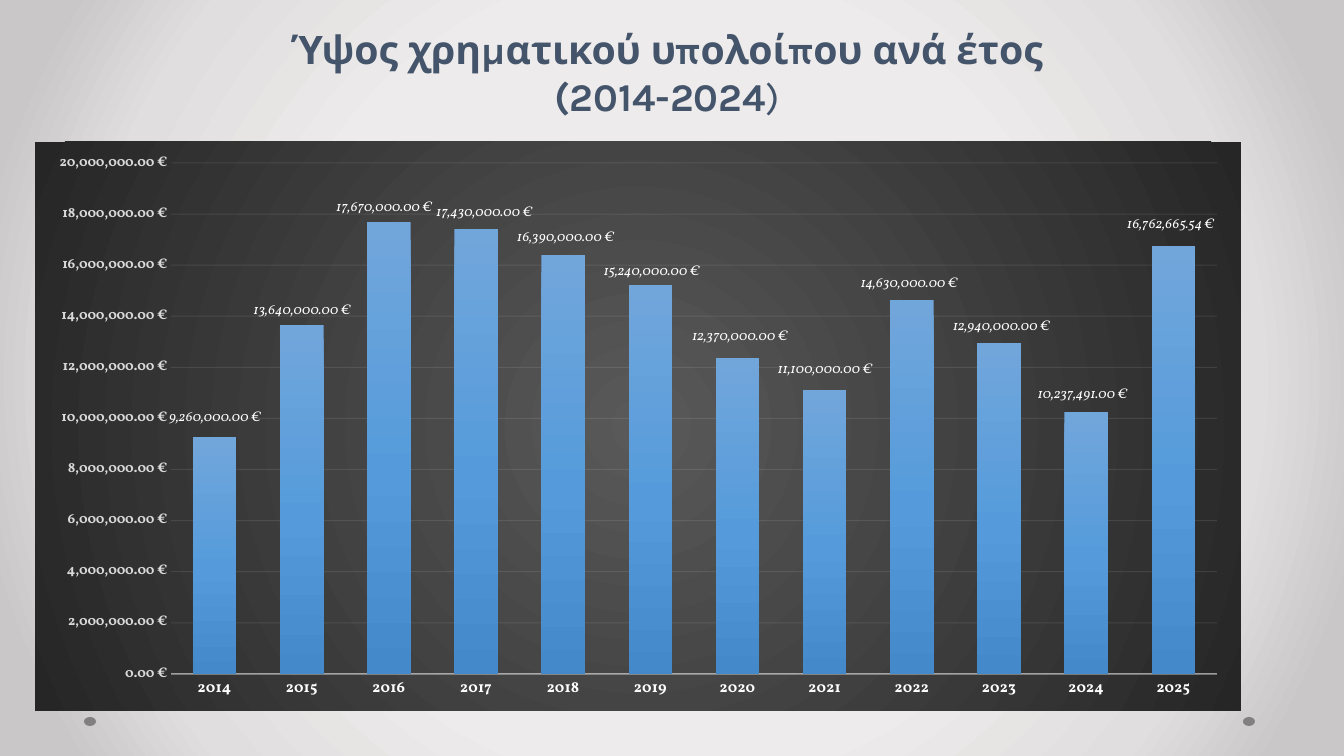
from dataclasses import dataclass, field
from typing import Any, NamedTuple

from lxml.etree import SubElement
from pptx import Presentation
from pptx.chart.chart import Chart
from pptx.chart.data import CategoryChartData
from pptx.dml.color import RGBColor
from pptx.dml.line import LineFormat
from pptx.enum.chart import XL_CHART_TYPE, XL_LABEL_POSITION, XL_TICK_MARK
from pptx.enum.shapes import MSO_SHAPE
from pptx.enum.text import MSO_ANCHOR, PP_ALIGN
from pptx.oxml import parse_xml
from pptx.oxml.ns import nsdecls, qn
from pptx.slide import Slide
from pptx.util import Emu, Pt

EURO = '#,##0.00\\ "€"'
LABEL_GAP = 13


class Box(NamedTuple):
    x: int
    y: int
    w: int
    h: int


class Gradient(NamedTuple):
    stops: tuple[tuple[int, str], ...]
    radial: bool


class Balance(NamedTuple):
    year: str
    amount: float
    shift: int
    gap: int


@dataclass(frozen=True)
class TextStyle:
    name: str
    size: int
    color: str
    bold: bool = False
    italic: bool = False

    def values(self) -> dict[str, Any]:
        return {"name": self.name, "size": Pt(self.size), "bold": self.bold, "italic": self.italic}


@dataclass(frozen=True)
class Theme:
    title: TextStyle = field(default=TextStyle("Karla", 28, "44546A", bold=True))
    years: TextStyle = field(default=TextStyle("Vollkorn", 11, "FFFFFF", bold=True))
    amounts: TextStyle = field(default=TextStyle("Vollkorn", 10, "D9D9D9", bold=True))
    labels: TextStyle = field(default=TextStyle("Vollkorn", 10, "FFFFFF", italic=True))
    dot: str = "808080"
    rule: str = "F2F2F2"
    page: Gradient = Gradient(((50, "EDEBEB"), (76, "E0DEDE"), (92, "C9C7C7")), True)
    panel: Gradient = Gradient(((0, "595959"), (100, "262626")), True)
    bars: Gradient = Gradient(((0, "71A6DB"), (55, "559BDB"), (100, "448ACA")), False)


THEME = Theme()
PAGE = Box(0, 0, 1344, 756)
TITLE = Box(247, 25, 840, 99)
CHART = Box(35, 142, 1206, 569)
PLOT = Box(171, 163, 1046, 511)
DOTS = [Box(x, 717, 12, 9) for x in (84, 1243)]
BALANCES = [
    Balance("2014", 9260000, 0, 19),
    Balance("2015", 13640000, 0, 14),
    Balance("2016", 17670000, -5, 14),
    Balance("2017", 17430000, 8, 15),
    Balance("2018", 16390000, 2, 16),
    Balance("2019", 15240000, 1, 12),
    Balance("2020", 12370000, 2, 20),
    Balance("2021", 11100000, 0, 20),
    Balance("2022", 14630000, -3, 15),
    Balance("2023", 12940000, 2, 16),
    Balance("2024", 10237491, -4, 17),
    Balance("2025", 16762665.54, -3, 20),
]


def px(n: int) -> Emu:
    return Emu(round(n * 914400 / 100.8))


def place(box: Box) -> list[Emu]:
    return [px(n) for n in box]


def assign(target: Any, values: dict[str, Any]) -> None:
    for name, value in values.items():
        setattr(target, name, value)


def set_font(font: Any, style: TextStyle) -> None:
    assign(font, style.values())
    font.color.rgb = RGBColor.from_string(style.color)


def gradient_fill(gradient: Gradient) -> Any:
    stops = "".join(
        f'<a:gs pos="{pos * 1000}"><a:srgbClr val="{color}"/></a:gs>' for pos, color in gradient.stops
    )
    centre = '<a:fillToRect l="50000" t="50000" r="50000" b="50000"/>'
    shade = f'<a:path path="circle">{centre}</a:path>' if gradient.radial else '<a:lin ang="5400000" scaled="0"/>'
    return parse_xml(f'<a:gradFill {nsdecls("a")} rotWithShape="1"><a:gsLst>{stops}</a:gsLst>{shade}</a:gradFill>')


def repaint(solid: Any, gradient: Gradient) -> None:
    solid.getparent().replace(solid, gradient_fill(gradient))


def manual_layout(inner: bool, **fractions: float) -> Any:
    target = '<c:layoutTarget val="inner"/>' if inner else ""
    modes = '<c:xMode val="edge"/><c:yMode val="edge"/>' if inner else ""
    parts = "".join(f'<c:{name} val="{value:.4f}"/>' for name, value in fractions.items())
    return parse_xml(
        f'<c:layout {nsdecls("c")}><c:manualLayout>{target}{modes}{parts}</c:manualLayout></c:layout>'
    )


def draw_rule(line: LineFormat, width: float, owner: Any, path: str, opacity: int) -> None:
    line.width = Pt(width)
    line.color.rgb = RGBColor.from_string(THEME.rule)
    for color in owner.xpath(f"{path}//a:ln//a:srgbClr"):
        SubElement(color, qn("a:alpha")).set("val", str(opacity * 1000))


def add_title(s: Slide) -> None:
    tf = s.shapes.add_textbox(*place(TITLE)).text_frame
    assign(tf, {"word_wrap": True, "vertical_anchor": MSO_ANCHOR.BOTTOM})
    p = tf.paragraphs[0]
    p.alignment = PP_ALIGN.CENTER
    set_font(p.font, THEME.title)
    p.add_run().text = "Ύψος χρηματικού υπολοίπου ανά έτος"
    p.add_line_break()
    p.add_run().text = "(2014-2024"
    r = p.add_run()
    r.text = ")"
    for run in p.runs:
        set_font(run.font, THEME.title)
    r.font.bold = False


def add_dot(s: Slide, box: Box) -> None:
    sp = s.shapes.add_shape(MSO_SHAPE.OVAL, *place(box))
    sp.shadow.inherit = False
    sp.fill.solid()
    sp.fill.fore_color.rgb = RGBColor.from_string(THEME.dot)
    sp.line.fill.background()


def style_axes(chart: Chart) -> None:
    years, amounts = chart.category_axis, chart.value_axis
    for axis, style in ((years, THEME.years), (amounts, THEME.amounts)):
        assign(axis, {"major_tick_mark": XL_TICK_MARK.NONE, "minor_tick_mark": XL_TICK_MARK.NONE})
        set_font(axis.tick_labels.font, style)
    assign(amounts, {"minimum_scale": 0, "maximum_scale": 20000000, "major_unit": 2000000})
    assign(amounts.tick_labels, {"number_format": EURO, "number_format_is_linked": False})
    amounts.format.line.fill.background()
    draw_rule(years.format.line, 1, years._element, "c:spPr", 54)
    draw_rule(amounts.major_gridlines.format.line, 0.75, amounts._element, "c:majorGridlines", 10)


def style_bars(chart: Chart) -> None:
    plot = chart.plots[0]
    assign(plot, {"gap_width": 100, "overlap": -24, "vary_by_categories": False})
    series = plot.series[0]
    series.format.fill.solid()
    repaint(series._element.xpath("c:spPr/a:solidFill")[0], THEME.bars)
    labels = series.data_labels
    assign(labels, {
        "show_value": True, "number_format": EURO,
        "number_format_is_linked": False, "position": XL_LABEL_POSITION.OUTSIDE_END,
    })
    set_font(labels.font, THEME.labels)
    for i, balance in enumerate(BALANCES):
        label = series.points[i].data_label
        set_font(label.font, THEME.labels)
        label.position = XL_LABEL_POSITION.OUTSIDE_END
        offset = manual_layout(False, x=balance.shift / CHART.w, y=(LABEL_GAP - balance.gap) / CHART.h)
        series._element.xpath("c:dLbls/c:dLbl")[i].insert(1, offset)


def add_balance_chart(s: Slide) -> None:
    data = CategoryChartData(number_format=EURO)
    data.categories = [b.year for b in BALANCES]
    data.add_series("Series 1", [b.amount for b in BALANCES])
    chart = s.shapes.add_chart(XL_CHART_TYPE.COLUMN_CLUSTERED, *place(CHART), data).chart
    assign(chart, {"has_title": False, "has_legend": False})
    set_font(chart.font, THEME.labels)
    style_axes(chart)
    style_bars(chart)
    space = chart._chartSpace
    panel = parse_xml(f'<c:spPr {nsdecls("c", "a")}><a:ln><a:noFill/></a:ln></c:spPr>')
    panel.insert(0, gradient_fill(THEME.panel))
    space.xpath("c:txPr")[0].addprevious(panel)
    area = space.xpath("c:chart/c:plotArea")[0]
    for layout in area.xpath("c:layout"):
        area.remove(layout)
    area.insert(0, manual_layout(
        True, x=(PLOT.x - CHART.x) / CHART.w, y=(PLOT.y - CHART.y) / CHART.h,
        w=PLOT.w / CHART.w, h=PLOT.h / CHART.h,
    ))


def main() -> None:
    """Build the slide of yearly cash balances and save it."""
    prs = Presentation()
    assign(prs, {"slide_width": px(PAGE.w), "slide_height": px(PAGE.h)})
    s = prs.slides.add_slide(prs.slide_layouts[6])
    s.background.fill.solid()
    repaint(s._element.xpath(".//p:bgPr/a:solidFill")[0], THEME.page)
    for dot in DOTS:
        add_dot(s, dot)
    add_title(s)
    add_balance_chart(s)
    prs.save("out.pptx")


if __name__ == "__main__":
    main()
